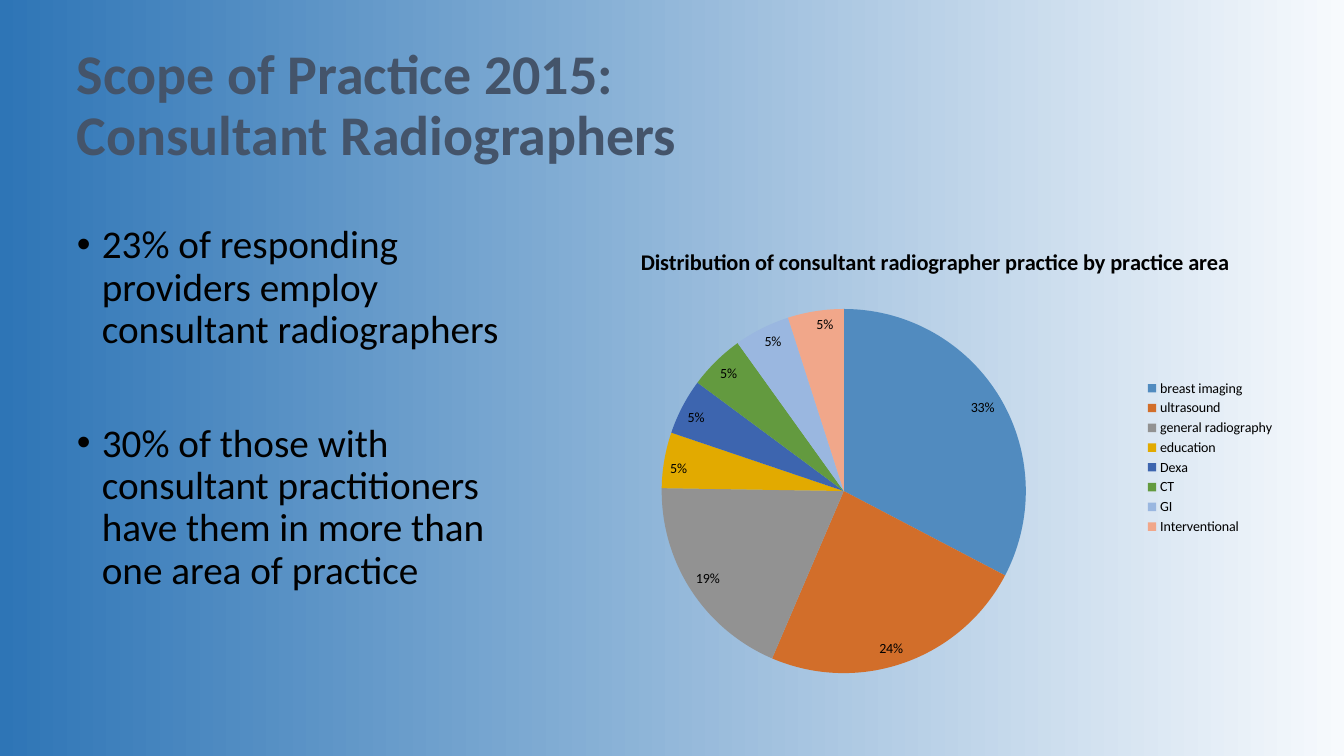
from dataclasses import dataclass

import pptx
import pptx.chart.data
import pptx.dml.color
import pptx.enum.chart
import pptx.enum.text
import pptx.oxml
import pptx.oxml.ns
import pptx.util

RGBColor = pptx.dml.color.RGBColor

BLACK = RGBColor(0x00, 0x00, 0x00)
SLATE = RGBColor(0x44, 0x54, 0x6A)
PALE = RGBColor(0xF7, 0xFA, 0xFD)
DEEP_BLUE = RGBColor(0x2E, 0x75, 0xB6)
STEEL = RGBColor(0x51, 0x8B, 0xBF)
ORANGE = RGBColor(0xD2, 0x6E, 0x2A)
GREY = RGBColor(0x92, 0x92, 0x92)
GOLD = RGBColor(0xE2, 0xAA, 0x00)
ROYAL = RGBColor(0x3D, 0x65, 0xAF)
GREEN = RGBColor(0x63, 0x9A, 0x3F)
LIGHT_BLUE = RGBColor(0x9A, 0xB7, 0xE0)
SALMON = RGBColor(0xF1, 0xA7, 0x8A)

FONT = "Calibri"
EMU_PER_PX = 914400 / 100.8


@dataclass(frozen=True)
class Box:
    left: int
    top: int
    width: int
    height: int

    def emu(self) -> tuple:
        return tuple(px(n) for n in (self.left, self.top, self.width, self.height))


@dataclass(frozen=True)
class PracticeArea:
    name: str
    percent: int
    color: RGBColor


@dataclass(frozen=True)
class Bullet:
    text: str
    space_before: int


TITLE_BOX = Box(67, 44, 1199, 126)
BODY_BOX = Box(67, 220, 446, 456)
CHART_BOX = Box(534, 227, 751, 461)
PIE_BOX = Box(662, 309, 364, 364)
CHART_TITLE_BOX = Box(637, 243, 588, 24)

TITLE_LINES = ("Scope of Practice 2015: ", "Consultant Radiographers")
BULLETS = (
    Bullet("23% of responding providers employ consultant radiographers", 0),
    Bullet("30% of those with consultant practitioners have them in more than "
           "one area of practice", 51),
)
CHART_TITLE = "Distribution of consultant radiographer practice by practice area"
AREAS = (
    PracticeArea("breast imaging", 33, STEEL),
    PracticeArea("ultrasound", 24, ORANGE),
    PracticeArea("general radiography", 19, GREY),
    PracticeArea("education", 5, GOLD),
    PracticeArea("Dexa", 5, ROYAL),
    PracticeArea("CT", 5, GREEN),
    PracticeArea("GI", 5, LIGHT_BLUE),
    PracticeArea("Interventional", 5, SALMON),
)


def px(length: int) -> int:
    return round(length * EMU_PER_PX)


def set_font(font, size: int, color: RGBColor, bold: bool = False) -> None:
    font.name = FONT
    font.size = pptx.util.Pt(size)
    font.bold = bold
    font.color.rgb = color


def add_text_frame(slide, box: Box):
    frame = slide.shapes.add_textbox(*box.emu()).text_frame
    frame.word_wrap = True
    return frame


def paint_background(slide) -> None:
    fill = slide.background.fill
    fill.gradient()
    fill.gradient_angle = 180
    for stop, color, position in zip(fill.gradient_stops, (PALE, DEEP_BLUE), (0, 1)):
        stop.color.rgb = color
        stop.position = position


def add_title(slide) -> None:
    frame = add_text_frame(slide, TITLE_BOX)
    frame.vertical_anchor = pptx.enum.text.MSO_ANCHOR.MIDDLE
    paragraph = frame.paragraphs[0]
    paragraph.line_spacing = 0.9
    set_font(paragraph.font, 40, SLATE, bold=True)
    first, second = TITLE_LINES
    paragraph.add_run().text = first
    paragraph.add_line_break()
    paragraph.add_run().text = second


def add_bullets(slide) -> None:
    frame = add_text_frame(slide, BODY_BOX)
    for index, bullet in enumerate(BULLETS):
        paragraph = frame.add_paragraph() if index else frame.paragraphs[0]
        paragraph.line_spacing = 0.9
        paragraph.space_before = pptx.util.Pt(bullet.space_before)
        properties = paragraph._p.get_or_add_pPr()
        properties.set("marL", str(px(25)))
        properties.set("indent", str(-px(25)))
        for tag, name, value in (("buFont", "typeface", "Arial"), ("buChar", "char", "•")):
            element = pptx.oxml.parse_xml(f"<a:{tag} {pptx.oxml.ns.nsdecls('a')}/>")
            element.set(name, value)
            properties.append(element)
        set_font(paragraph.font, 28, BLACK)
        paragraph.add_run().text = bullet.text


def place_in_chart(parent, box: Box, index: int, with_size: bool) -> None:
    """Give a chart part a manual layout, in fractions of the chart."""
    for old in parent.xpath("c:layout"):
        parent.remove(old)
    values = [("xMode", "edge"), ("yMode", "edge"),
              ("x", round((box.left - CHART_BOX.left) / CHART_BOX.width, 3)),
              ("y", round((box.top - CHART_BOX.top) / CHART_BOX.height, 3))]
    if with_size:
        values.insert(0, ("layoutTarget", "inner"))
        values += [("w", round(box.width / CHART_BOX.width, 3)),
                   ("h", round(box.height / CHART_BOX.height, 3))]
    items = "".join(f'<c:{tag} val="{value}"/>' for tag, value in values)
    parent.insert(index, pptx.oxml.parse_xml(
        f"<c:layout {pptx.oxml.ns.nsdecls('c')}><c:manualLayout>{items}"
        "</c:manualLayout></c:layout>"))


def add_practice_chart(slide) -> None:
    data = pptx.chart.data.CategoryChartData()
    data.categories = [area.name for area in AREAS]
    data.add_series("Series 1", [area.percent for area in AREAS])
    chart = slide.shapes.add_chart(
        pptx.enum.chart.XL_CHART_TYPE.PIE, *CHART_BOX.emu(), data).chart
    set_font(chart.font, 10, BLACK)

    # Chart title
    chart.has_title = True
    title_frame = chart.chart_title.text_frame
    title_frame.text = CHART_TITLE
    set_font(title_frame.paragraphs[0].font, 16, BLACK, bold=True)
    place_in_chart(chart.chart_title._element, CHART_TITLE_BOX, 1, with_size=False)

    # Legend
    chart.has_legend = True
    chart.legend.position = pptx.enum.chart.XL_LEGEND_POSITION.RIGHT
    chart.legend.include_in_layout = False
    set_font(chart.legend.font, 10, BLACK)

    # Slices and their labels
    plot = chart.plots[0]
    plot.vary_by_categories = True
    place_in_chart(plot._element.getparent(), PIE_BOX, 0, with_size=True)
    series = plot.series[0]
    for index, area in enumerate(AREAS):
        fill = series.points[index].format.fill
        fill.solid()
        fill.fore_color.rgb = area.color
    labels = series.data_labels
    labels.show_percentage = True
    labels.show_value = False
    labels.number_format = "0%"
    labels.number_format_is_linked = False
    labels.position = pptx.enum.chart.XL_LABEL_POSITION.INSIDE_END
    set_font(labels.font, 10, BLACK)


def main() -> None:
    presentation = pptx.Presentation()
    presentation.slide_width = px(1344)
    presentation.slide_height = px(756)
    slide = presentation.slides.add_slide(presentation.slide_layouts[6])
    paint_background(slide)
    add_bullets(slide)
    add_practice_chart(slide)
    add_title(slide)
    presentation.save("out.pptx")


if __name__ == "__main__":
    main()
